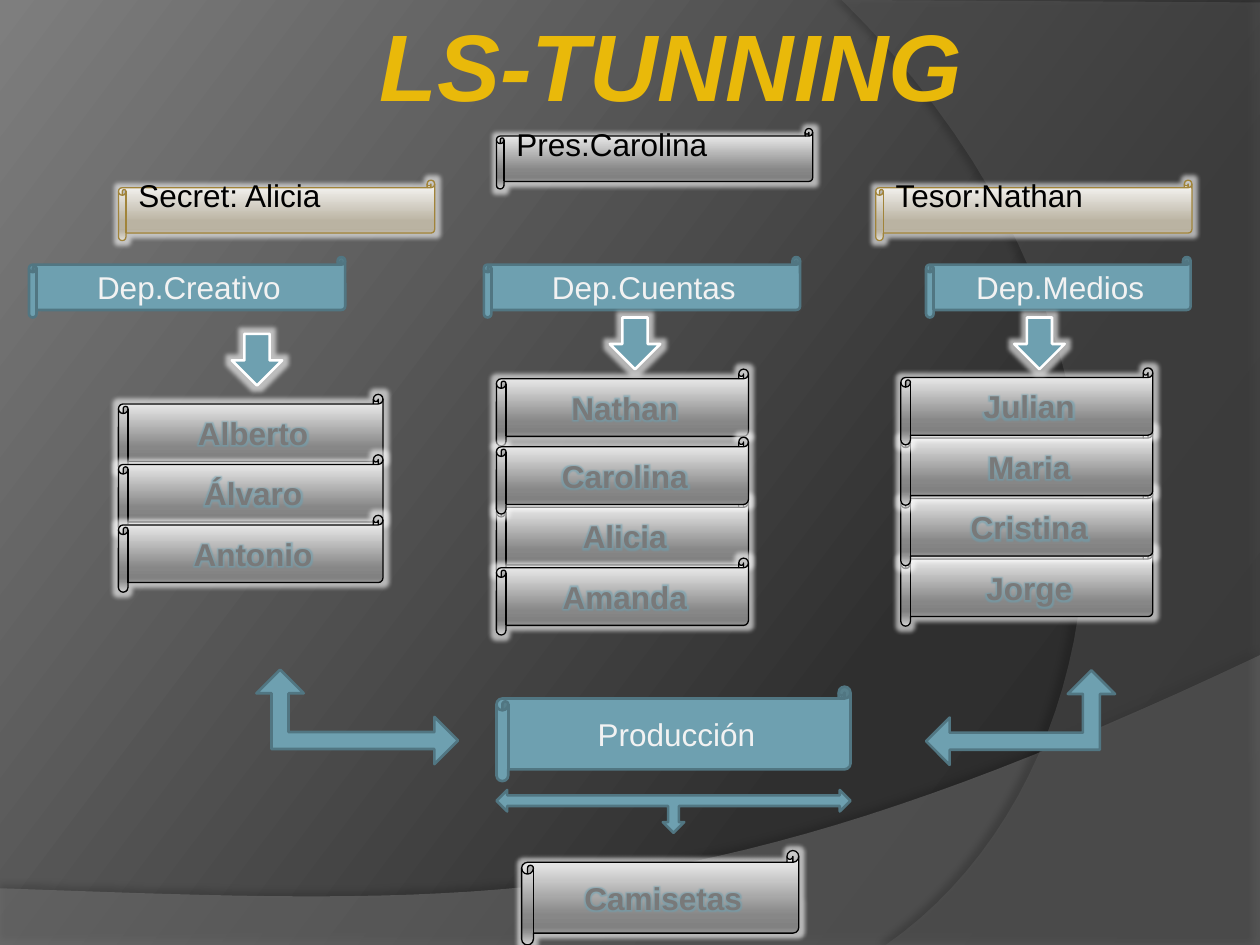
from dataclasses import dataclass

from lxml import etree
from pptx import Presentation
from pptx.dml.color import RGBColor
from pptx.enum.shapes import MSO_SHAPE
from pptx.enum.text import MSO_ANCHOR, MSO_AUTO_SIZE, PP_ALIGN
from pptx.oxml.ns import qn
from pptx.util import Inches, Pt

SCROLL = MSO_SHAPE.HORIZONTAL_SCROLL
DOWN = MSO_SHAPE.DOWN_ARROW
CORNER = MSO_SHAPE.LEFT_UP_ARROW
FORK = MSO_SHAPE.LEFT_RIGHT_UP_ARROW
MIDDLE = MSO_ANCHOR.MIDDLE
LEFT, CENTER = PP_ALIGN.LEFT, PP_ALIGN.CENTER

BLACK = RGBColor(0x00, 0x00, 0x00)
WHITE = RGBColor(0xFF, 0xFF, 0xFF)
PALE = RGBColor(0xF2, 0xF2, 0xF2)
GRAY = RGBColor(0x79, 0x79, 0x79)
TEAL = RGBColor(0x6E, 0xA0, 0xB0)
EDGE = RGBColor(0x51, 0x76, 0x82)
BRONZE = RGBColor(0xA1, 0x84, 0x3A)
GOLD = RGBColor(0xE9, 0xB9, 0x0A)
SWOOP = RGBColor(0x7F, 0x7F, 0x7F)
ARC = RGBColor(0x5E, 0x5E, 0x5E)

BACK = [(0, "282828"), (30, "2F2F2F"), (100, "7E7E7E")]
STEEL = [(0, "FEFEFE"), (68, "878787"), (81, "818181"), (86, "909090"), (100, "D3D3D3")]
SAND = [(0, "FEFEFE"), (68, "BAB3A2"), (81, "B8B19F"), (86, "BFB8A9"), (100, "E3E1DB")]


@dataclass
class Style:
    fill: RGBColor | list
    line: RGBColor
    weight: float
    ink: RGBColor
    bold: bool = False
    align: PP_ALIGN = CENTER
    lift: float = 0.05
    glow: bool = True


DEPT = Style(TEAL, EDGE, 1.5, PALE, glow=False)
STAFF = Style(STEEL, BLACK, 0.75, GRAY, bold=True)
CHIEF = Style(STEEL, BLACK, 0.75, BLACK, align=LEFT, lift=0.29)
AIDE = Style(SAND, BRONZE, 0.75, BLACK, align=LEFT, lift=0.29)
POINTER = Style(TEAL, WHITE, 1.5, WHITE)


@dataclass
class Box:
    text: str
    left: float
    top: float
    width: float
    height: float
    style: Style


@dataclass
class Stack:
    """Scrolls listed from back to front; step is the move to the next one."""
    left: float
    top: float
    width: float
    step: float
    names: list[str]


DEPTS = [
    Box("Dep.Creativo", 0.23, 2.04, 2.51, 0.48, DEPT),
    Box("Dep.Cuentas", 3.84, 2.04, 2.51, 0.48, DEPT),
    Box("Dep.Medios", 7.35, 2.04, 2.1, 0.48, DEPT),
]
STACKS = [
    Stack(0.94, 3.13, 2.1, 0.48, ["Alberto", "Álvaro", "Antonio"]),
    Stack(3.94, 2.93, 2, 0.48, ["Nathan"]),
    Stack(3.94, 3.95, 2, 0.48, ["Alicia", "Amanda"]),
    Stack(3.94, 3.47, 2, 0.48, ["Carolina"]),
    Stack(7.15, 4.36, 2, -0.48, ["Jorge", "Cristina", "Maria", "Julian"]),
]
OTHERS = [
    Box("Producción", 3.94, 5.45, 2.81, 0.75, DEPT),
    Box("Camisetas", 4.14, 6.75, 2.2, 0.75, STAFF),
    Box("Secret: Alicia", 0.94, 1.43, 2.51, 0.48, AIDE),
    Box("Tesor:Nathan", 6.95, 1.43, 2.51, 0.48, AIDE),
    Box("Pres:Carolina", 3.94, 1.02, 2.51, 0.48, CHIEF),
]


def add(parent, tag: str, **attrs):
    return etree.SubElement(parent, qn(tag), {k: str(v) for k, v in attrs.items()})


def tint(parent, color, alpha: int) -> None:
    add(add(parent, "a:srgbClr", val=color), "a:alpha", val=alpha * 1000)


def shade(fill, root, stops: list, angle: int) -> None:
    """Give the fill found under root a linear gradient."""
    fill.gradient()
    grad = root.find(".//" + qn("a:gradFill"))
    group = grad.find(qn("a:gsLst"))
    for stop in list(group):
        group.remove(stop)
    for place, color in stops:
        add(add(group, "a:gs", pos=place * 1000), "a:srgbClr", val=color)
    grad.find(qn("a:lin")).set("ang", str(angle * 60000))


def glow(parent, color: RGBColor, radius: float, alpha: int) -> None:
    effects = parent.find(qn("a:effectLst"))
    if effects is None:
        effects = add(parent, "a:effectLst")
    tint(add(effects, "a:glow", rad=Pt(radius)), color, alpha)


def draw(slide, kind, left: float, top: float, width: float, height: float, style: Style):
    shape = slide.shapes.add_shape(
        kind, Inches(left), Inches(top), Inches(width), Inches(height))
    shape.shadow.inherit = False
    if isinstance(style.fill, list):
        shade(shape.fill, shape.element, style.fill, 90)
    else:
        shape.fill.solid()
        shape.fill.fore_color.rgb = style.fill
    shape.line.color.rgb = style.line
    shape.line.width = Pt(style.weight)
    if style.glow:
        glow(shape.element.spPr, WHITE, 5, 60)
    return shape


def scroll(slide, box: Box) -> None:
    style = box.style
    shape = draw(slide, SCROLL, box.left, box.top, box.width, box.height, style)
    frame = shape.text_frame
    frame.vertical_anchor = MIDDLE
    frame.margin_bottom = Inches(style.lift)
    para = frame.paragraphs[0]
    run = para.add_run()
    run.text = box.text
    para.alignment = style.align
    font = para.font
    font.name, font.size, font.bold = "Arial", Pt(18), style.bold
    font.color.rgb = style.ink
    if style.bold:
        glow(run.font._element, TEAL, 5, 60)


def band(slide, start, lines, curve, color, alpha, dim, shift, angle) -> None:
    """Draw a see-through area: straight lines, then a Bezier curve."""
    (x0, y0), *rest = [lines[-1], *curve]
    points = list(lines)
    for i in range(1, 41):
        t = i / 40
        parts = [(1 - t) ** 3, 3 * t * (1 - t) ** 2, 3 * t * t * (1 - t), t ** 3]
        spots = [(x0, y0), *rest]
        points.append(tuple(sum(w * p[k] for w, p in zip(parts, spots)) for k in (0, 1)))
    path = slide.shapes.build_freeform(Inches(start[0]), Inches(start[1]))
    path.add_line_segments([(Inches(x), Inches(y)) for x, y in points], close=True)
    shape = path.convert_to_shape()
    shape.shadow.inherit = False
    shape.fill.solid()
    shape.fill.fore_color.rgb = color
    shape.line.fill.background()
    props = shape.element.spPr
    add(props.find(".//" + qn("a:srgbClr")), "a:alpha", val=alpha * 1000)
    cast = add(props.find(qn("a:effectLst")), "a:outerShdw", blurRad=Pt(4),
               dist=Pt(shift), dir=angle * 60000, rotWithShape=0)
    tint(cast, BLACK, dim)


def head(slide) -> None:
    title = slide.shapes.title
    title.left, title.top = Inches(2.89), Inches(0)
    title.width, title.height = Inches(4.87), Inches(1.01)
    frame = title.text_frame
    frame.text = "LS-TUNNING"
    frame.word_wrap = False
    frame.auto_size = MSO_AUTO_SIZE.NONE
    frame.vertical_anchor = MIDDLE
    para = frame.paragraphs[0]
    para.alignment = CENTER
    font = para.font
    font.name, font.size, font.bold, font.italic = "Arial", Pt(54), True, True
    font.color.rgb = GOLD
    slide.shapes.element.append(title.element)


def main() -> None:
    deck = Presentation()
    deck.slide_width, deck.slide_height = Inches(10), Inches(7.5)
    slide = deck.slides.add_slide(deck.slide_layouts[5])
    shade(slide.background.fill, slide.element, BACK, 217)
    band(slide, (0, 7.05), [(0, 7.5), (10, 7.5), (10, 5.2)],
         [(5.59, 7.29), (3.91, 7.19), (0, 7.05)], SWOOP, 45, 35, 3.5, 270)
    band(slide, (10, 0.02), [(10, 7.5), (7.03, 7.5)],
         [(8.91, 6.19), (9.47, 2.75), (6.68, 0)], ARC, 40, 45, 4, 180)

    staff = [Box(name, s.left, s.top + i * s.step, s.width, 0.61, STAFF)
             for s in STACKS for i, name in enumerate(s.names)]
    for box in DEPTS + staff + OTHERS:
        scroll(slide, box)

    for left, top in [(1.84, 2.65), (4.84, 2.52), (8.05, 2.52)]:
        draw(slide, DOWN, left, top, 0.4, 0.41, POINTER)
    right = draw(slide, CORNER, 7.35, 5.32, 1.5, 0.75, DEPT)
    left = draw(slide, CORNER, 2.46, 4.89, 0.75, 1.6, DEPT)
    left.rotation = 90
    for arrow in (right, left):
        arrow.adjustments[0] = 0.18
    draw(slide, FORK, 3.94, 6.27, 2.81, 0.34, DEPT).rotation = 180
    head(slide)
    deck.save("out.pptx")


if __name__ == "__main__":
    main()
